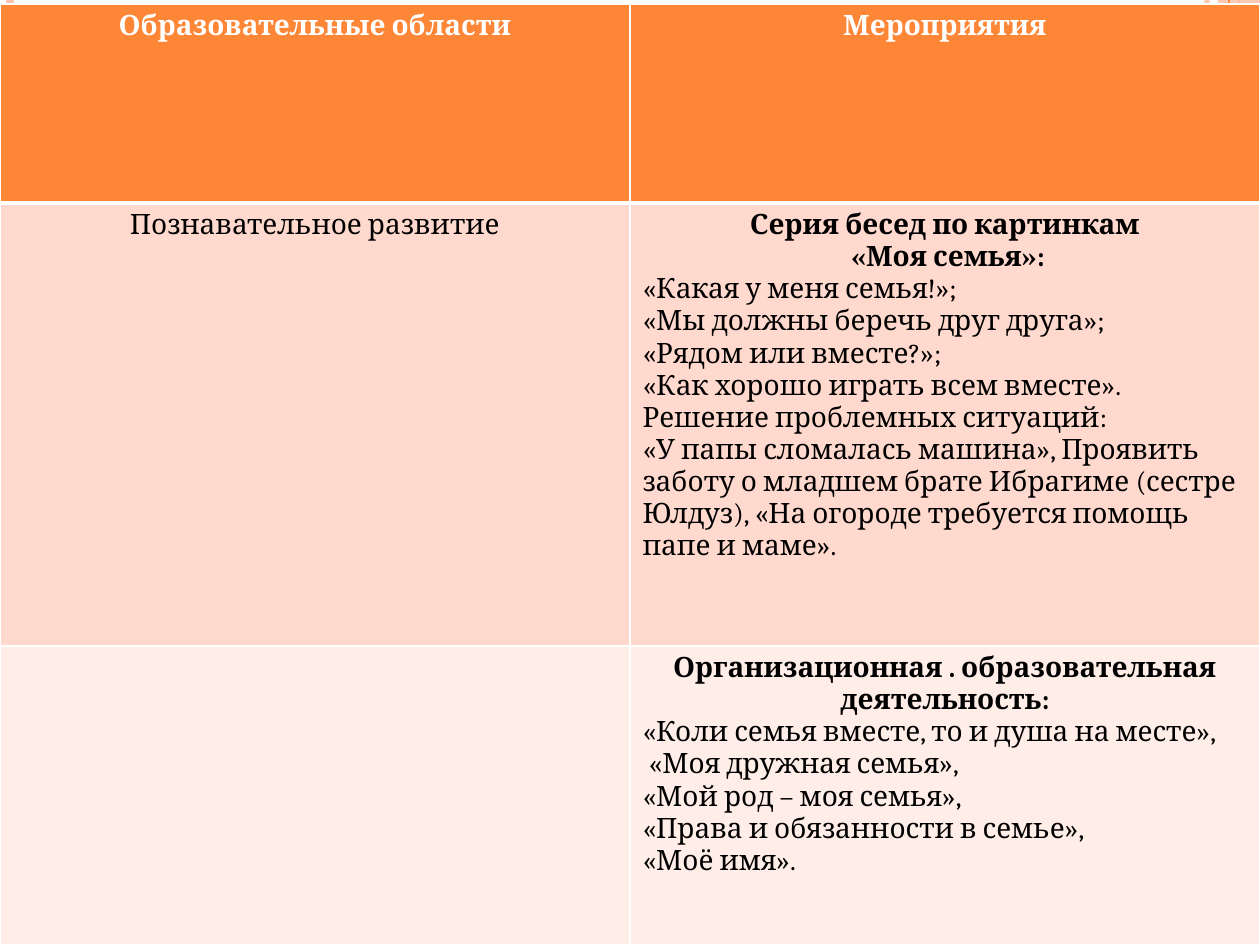
from lxml.etree import SubElement
from pptx import Presentation
from pptx.dml.color import RGBColor
from pptx.enum.shapes import MSO_CONNECTOR, MSO_SHAPE
from pptx.enum.text import PP_ALIGN
from pptx.oxml.ns import qn
from pptx.util import Pt

PX = 914400 // 126
SLIDE_WIDTH, SLIDE_HEIGHT = 1260, 945
FONT, FONT_SIZE = "Cambria", Pt(16)

WHITE = RGBColor(0xFF, 0xFF, 0xFF)
BLACK = RGBColor(0x00, 0x00, 0x00)
ORANGE = RGBColor(0xFE, 0x86, 0x37)
PEACH = RGBColor(0xFE, 0xC3, 0xAE)
BAND_DARK = RGBColor(0xFF, 0xD9, 0xCE)
BAND_LIGHT = RGBColor(0xFF, 0xED, 0xE8)

# Vertical rules behind the table: x, colour, width in points, opacity %
RULES_UNDER_STRIPE = [(1207, PEACH, 3, 93), (10, PEACH, 4.5, 100), (1239, ORANGE, 1.5, 100)]
RULES_OVER_STRIPE = [(1229, ORANGE, 0.75, 100)]
STRIPE_LEFT, STRIPE_OPACITY = 1218, 87

TABLE_TOP = 4
HEADING, CENTERED, PLAIN = (True, True), (False, True), (False, False)  # bold, centred

# Each row: height, fill, text colour, bottom border in points, cells of (text, style)
ROWS = [
    (199, ORANGE, WHITE, 3, [
        [("Образовательные области", HEADING)],
        [("Мероприятия", HEADING)],
    ]),
    (443, BAND_DARK, BLACK, 1, [
        [("Познавательное развитие", CENTERED)],
        [
            ("Серия бесед по картинкам", HEADING),
            (" «Моя семья»:", HEADING),
            ("«Какая у меня семья!»;", PLAIN),
            ("«Мы должны беречь друг друга»;", PLAIN),
            ("«Рядом или вместе?»;", PLAIN),
            ("«Как хорошо играть всем вместе».", PLAIN),
            ("Решение проблемных ситуаций:", PLAIN),
            ("«У папы сломалась машина», Проявить заботу о младшем брате Ибрагиме "
             "(сестре Юлдуз), «На огороде требуется помощь папе и маме».", PLAIN),
        ],
    ]),
    (299, BAND_LIGHT, BLACK, 1, [
        [],
        [
            ("Организационная . образовательная деятельность:", HEADING),
            ("«Коли семья вместе, то и душа на месте»,", PLAIN),
            (" «Моя дружная семья»,", PLAIN),
            ("«Мой род – моя семья»,", PLAIN),
            ("«Права и обязанности в семье»,", PLAIN),
            ("«Моё имя».", PLAIN),
        ],
    ]),
]


def set_opacity(properties, percent):
    color = next(properties.iter(qn("a:srgbClr")))
    SubElement(color, qn("a:alpha"), val=str(percent * 1000))


def add_rule(slide, x, color, width, opacity):
    rule = slide.shapes.add_connector(
        MSO_CONNECTOR.STRAIGHT, x * PX, 0, x * PX, SLIDE_HEIGHT * PX)
    rule.line.color.rgb = color
    rule.line.width = Pt(width)
    if opacity < 100:
        set_opacity(rule.line._get_or_add_ln(), opacity)
    SubElement(rule._element.spPr, qn("a:effectLst"))


def add_stripe(slide):
    stripe = slide.shapes.add_shape(
        MSO_SHAPE.RECTANGLE, STRIPE_LEFT * PX, 0,
        (SLIDE_WIDTH - STRIPE_LEFT) * PX, SLIDE_HEIGHT * PX)
    stripe.shadow.inherit = False
    stripe.fill.solid()
    stripe.fill.fore_color.rgb = PEACH
    set_opacity(stripe._element.spPr, STRIPE_OPACITY)
    stripe.line.fill.background()


def set_borders(cell, top, bottom):
    properties = cell._tc.get_or_add_tcPr()
    for side, width in (("L", 1), ("R", 1), ("T", top), ("B", bottom)):
        line = SubElement(properties, qn(f"a:ln{side}"), w=str(Pt(width)))
        fill = SubElement(line, qn("a:solidFill"))
        SubElement(fill, qn("a:srgbClr"), val=str(WHITE))


def write_cell(cell, paragraphs, color):
    frame = cell.text_frame
    frame.text = "\n".join(text for text, _ in paragraphs)
    styles = [style for _, style in paragraphs] or [PLAIN]
    for paragraph, (bold, centered) in zip(frame.paragraphs, styles):
        paragraph.alignment = PP_ALIGN.CENTER if centered else PP_ALIGN.LEFT
        font = paragraph.font
        font.name, font.size, font.bold = FONT, FONT_SIZE, bold
        font.color.rgb = color


def add_activities_table(slide):
    columns = len(ROWS[0][-1])
    height = sum(row[0] for row in ROWS)
    table = slide.shapes.add_table(
        len(ROWS), columns, 0, TABLE_TOP * PX, SLIDE_WIDTH * PX, height * PX).table
    top = 1
    for row, (row_height, fill, color, bottom, cells) in zip(table.rows, ROWS):
        row.height = row_height * PX
        for cell, paragraphs in zip(row.cells, cells):
            set_borders(cell, top, bottom)
            cell.fill.solid()
            cell.fill.fore_color.rgb = fill
            write_cell(cell, paragraphs, color)
        top = bottom


def main():
    deck = Presentation()
    deck.slide_width, deck.slide_height = SLIDE_WIDTH * PX, SLIDE_HEIGHT * PX
    slide = deck.slides.add_slide(deck.slide_layouts[6])
    for rule in RULES_UNDER_STRIPE:
        add_rule(slide, *rule)
    add_stripe(slide)
    for rule in RULES_OVER_STRIPE:
        add_rule(slide, *rule)
    add_activities_table(slide)
    deck.save("out.pptx")


if __name__ == "__main__":
    main()
